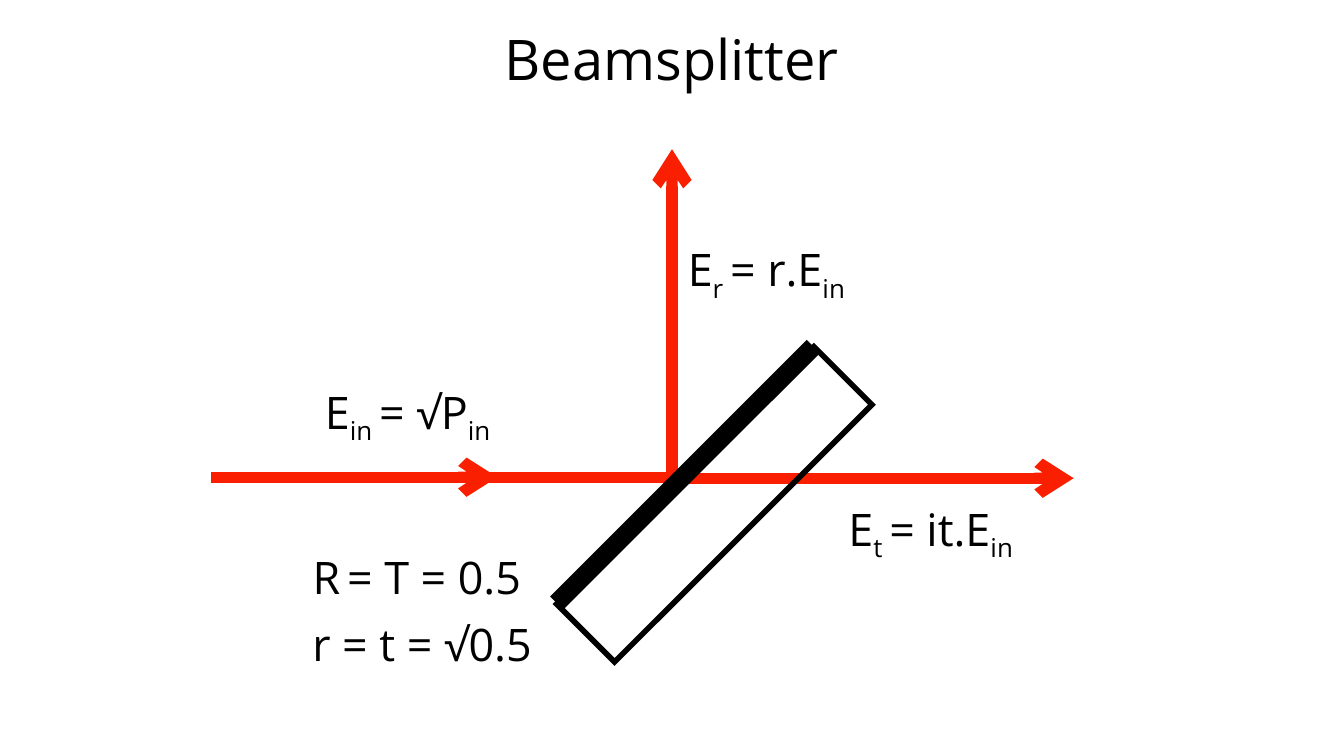
import pptx
import pptx.util
import pptx.enum.shapes
import pptx.enum.text
import pptx.dml.color
import pptx.oxml.ns
import lxml.etree

Cm = pptx.util.Cm
Pt = pptx.util.Pt
HUES = {"ink": "000000", "beam": "FA1F00"}


def hue(name):
    return pptx.dml.color.RGBColor.from_string(HUES[name])


def add_tag(node, tag, **attrs):
    return lxml.etree.SubElement(node, pptx.oxml.ns.qn(tag), attrs)


class Deck:
    face = "Open Sans"
    size = 24

    def __init__(self, wide, high):
        self.prs = pptx.Presentation()
        self.prs.slide_width, self.prs.slide_height = Cm(wide), Cm(high)
        self.slide = self.prs.slides.add_slide(self.prs.slide_layouts[5])

    def style(self, para, size):
        para.alignment = pptx.enum.text.PP_ALIGN.CENTER
        for run in para.runs:
            run.font.name = self.face
            run.font.size = Pt(size)
            run.font.color.rgb = hue("ink")

    def title(self, text, left, top, wide, high):
        box = self.slide.shapes.title
        box.left, box.top, box.width, box.height = map(Cm, (left, top, wide, high))
        frame = box.text_frame
        frame.margin_left = frame.margin_right = Cm(0.08)
        frame.margin_top = frame.margin_bottom = Cm(0.08)
        frame.vertical_anchor = pptx.enum.text.MSO_ANCHOR.MIDDLE
        frame.text = text
        self.style(frame.paragraphs[0], 30)

    def label(self, left, top, wide, *parts):
        """Every second part is a subscript."""
        box = self.slide.shapes.add_textbox(Cm(left), Cm(top), Cm(wide), Cm(1.27))
        frame = box.text_frame
        frame.word_wrap = False
        frame.auto_size = pptx.enum.text.MSO_AUTO_SIZE.SHAPE_TO_FIT_TEXT
        para = frame.paragraphs[0]
        for spot, part in enumerate(parts):
            run = para.add_run()
            run.text = part
            if spot % 2:
                run.font._element.set("baseline", "-25000")
        self.style(para, self.size)

    def line(self, start, end, color, width, arrow=False):
        kind = pptx.enum.shapes.MSO_CONNECTOR.STRAIGHT
        line = self.slide.shapes.add_connector(kind, *map(Cm, start + end))
        line.line.color.rgb = hue(color)
        line.line.width = Pt(width)
        if arrow:
            add_tag(line.line._get_or_add_ln(), "a:tailEnd", type="arrow")
        add_tag(line._element.spPr, "a:effectLst")

    def plate(self, left, top, wide, high, turn):
        kind = pptx.enum.shapes.MSO_SHAPE.RECTANGLE
        box = self.slide.shapes.add_shape(kind, *map(Cm, (left, top, wide, high)))
        box.rotation = turn
        box.shadow.inherit = False
        box.fill.background()
        box.line.color.rgb = hue("ink")
        box.line.width = Pt(3)
        add_tag(box.line._get_or_add_ln(), "a:miter", lim="800000")


def main():
    deck = Deck(25.4, 14.29)
    deck.title("Beamsplitter", 1.85, 0.18, 21.69, 1.83)

    # Beams: reflected, transmitted, incoming
    mid, axis = 12.7, 9.02
    deck.line((mid, axis), (mid, 2.82), "beam", 6, True)
    deck.line((mid, 9.04), (20.29, 9.04), "beam", 6, True)
    deck.line((3.99, axis), (9.4, axis), "beam", 6, True)
    deck.line((7.32, axis), (mid, axis), "beam", 6)

    # Glass plate with its coated face
    deck.plate(10.06, 8.76, 6.88, 1.55, 315)
    deck.line((10.52, 11.4), (15.37, 6.55), "ink", 10)

    # Field labels
    deck.label(5.8, 7.14, 3.81, "E", "in ", "= √P", "in")
    deck.label(12.67, 4.45, 3.63, "E", "r ", "= r.E", "in")
    deck.label(15.71, 9.35, 3.76, "E", "t ", "= it.E", "in")

    # Coefficients
    deck.label(5.53, 10.26, 4.7, "R", " ", "= T = 0.5")
    deck.label(5.63, 11.53, 4.7, "r = t = √0.5")

    deck.prs.save("out.pptx")


if __name__ == "__main__":
    main()
